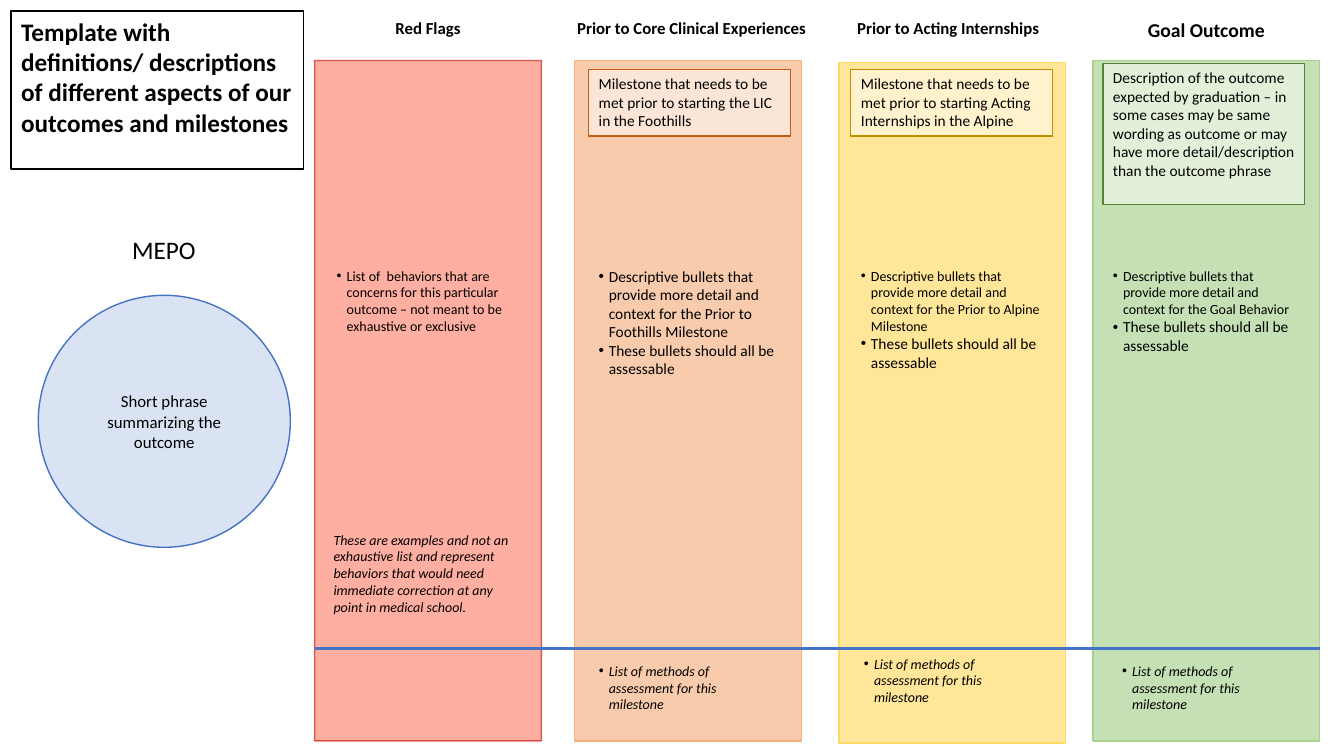
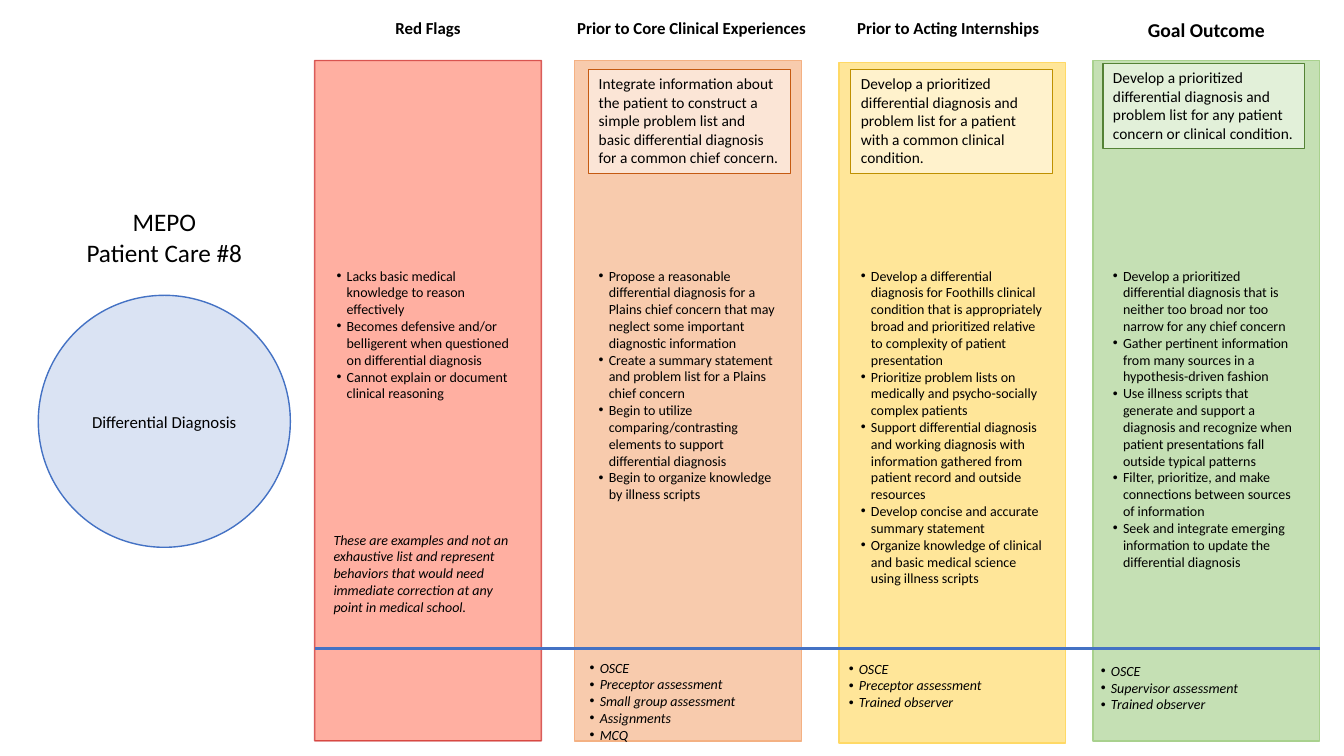
from lxml import etree
from pptx import Presentation
from pptx.dml.color import RGBColor
from pptx.enum.shapes import MSO_CONNECTOR, MSO_SHAPE
from pptx.enum.text import MSO_ANCHOR, MSO_AUTO_SIZE, PP_ALIGN
from pptx.oxml.ns import qn
from pptx.util import Pt

PX = 9144  # 100 px to the inch
LEFT, CENTER = PP_ALIGN.LEFT, PP_ALIGN.CENTER
TOP, MIDDLE = MSO_ANCHOR.TOP, MSO_ANCHOR.MIDDLE
RECTANGLE, OVAL = MSO_SHAPE.RECTANGLE, MSO_SHAPE.OVAL
GROW = MSO_AUTO_SIZE.SHAPE_TO_FIT_TEXT
STRAIGHT = MSO_CONNECTOR.STRAIGHT

FONT = "Calibri"
BLACK = RGBColor(0x00, 0x00, 0x00)
WHITE = RGBColor(0xFF, 0xFF, 0xFF)
BLUE = RGBColor(0x44, 0x72, 0xC4)
PALE_BLUE = RGBColor(0xDA, 0xE3, 0xF3)
RED = RGBColor(0xFF, 0x26, 0x00)
DARK_RED = RGBColor(0xC0, 0x00, 0x00)
ORANGE = RGBColor(0xF8, 0xCB, 0xAD)
ORANGE_EDGE = RGBColor(0xF4, 0xB1, 0x83)
PALE_ORANGE = RGBColor(0xFB, 0xE5, 0xD6)
DARK_ORANGE = RGBColor(0xC5, 0x5A, 0x11)
YELLOW = RGBColor(0xFF, 0xE6, 0x99)
YELLOW_EDGE = RGBColor(0xFF, 0xD9, 0x66)
PALE_YELLOW = RGBColor(0xFF, 0xF2, 0xCC)
DARK_YELLOW = RGBColor(0xBF, 0x90, 0x00)
GREEN = RGBColor(0xC5, 0xE0, 0xB4)
GREEN_EDGE = RGBColor(0xA9, 0xD1, 0x8E)
PALE_GREEN = RGBColor(0xE2, 0xF0, 0xD9)
DARK_GREEN = RGBColor(0x54, 0x82, 0x35)

COLUMN_WIDTH, COLUMN_HEIGHT = 225, 675
TEXT_WIDTH, DETAIL_TOP = 200, 260
DIVIDER_Y = 643
FLAG_ALPHAS = (37000, 59000)  # fill, then line

# left, top, fill, edge, text left
COLUMNS = [
    (312, 60, RED, DARK_RED, 324),
    (570, 60, ORANGE, ORANGE_EDGE, 584),
    (832, 62, YELLOW, YELLOW_EDGE, 844),
    (1084, 60, GREEN, GREEN_EDGE, 1094),
]
# text, left, width, height, size
HEADINGS = [
    ("Red Flags", 312, 225, 30, 12),
    ("Prior to Core Clinical Experiences", 560, 252, 30, 12),
    ("Prior to Acting Internships", 828, 225, 30, 12),
    ("Goal Outcome", 1084, 225, 34, 14),
]
# left, top, fill, edge
MILESTONES = [
    (584, 69, PALE_ORANGE, DARK_ORANGE),
    (844, 69, PALE_YELLOW, DARK_YELLOW),
    (1094, 63, PALE_GREEN, DARK_GREEN),
]
DISCLAIMER = (
    "These are examples and not an exhaustive list and represent behaviors that "
    "would need immediate correction at any point in medical school."
)
ASSESSABLE = "These bullets should all be assessable"
METHODS = ["List of methods of assessment for this milestone"]

PAGES = [
    {
        "banner": "Template with definitions/ descriptions of different aspects "
                  "of our outcomes and milestones",
        "label": (["MEPO"], (50, 228, 225, 40)),
        "outcome": "Short phrase summarizing the outcome",
        # height, sizes, bullets
        "details": [
            (77, [10], [
                "List of  behaviors that are concerns for this particular outcome "
                "– not meant to be exhaustive or exclusive"]),
            (121, [11, 11], [
                "Descriptive bullets that provide more detail and context for the "
                "Prior to Foothills Milestone", ASSESSABLE]),
            (133, [10, 11], [
                "Descriptive bullets that provide more detail and context for the "
                "Prior to Alpine Milestone", ASSESSABLE]),
            (98, [10, 11], [
                "Descriptive bullets that provide more detail and context for the "
                "Goal Behavior", ASSESSABLE]),
        ],
        # height, text
        "milestones": [
            (66, "Milestone that needs to be met prior to starting the LIC in the "
                 "Foothills"),
            (66, "Milestone that needs to be met prior to starting Acting "
                 "Internships in the Alpine"),
            (140, "Description of the outcome expected by graduation – in some "
                  "cases may be same wording as outcome or may have more "
                  "detail/description than the outcome phrase"),
        ],
        # place, bullets
        "methods": [
            ((584, 652, 192, 61), METHODS),
            ((847, 645, 161, 61), METHODS),
            ((1103, 652, 161, 61), METHODS),
        ],
    },
    {
        "banner": None,
        "label": (["MEPO", "Patient Care #8"], (75, 200, 176, 71)),
        "outcome": "Differential Diagnosis",
        "details": [
            (145, [10] * 3, [
                "Lacks basic medical knowledge to reason effectively",
                "Becomes defensive and/or belligerent when questioned on "
                "differential diagnosis",
                "Cannot explain or document clinical reasoning"]),
            (246, [10] * 4, [
                "Propose a reasonable differential diagnosis for a Plains chief "
                "concern that may neglect some important diagnostic information",
                "Create a summary statement and problem list for a Plains chief "
                "concern",
                "Begin to utilize comparing/contrasting elements to support "
                "differential diagnosis",
                "Begin to organize knowledge by illness scripts"]),
            (365, [10] * 5, [
                "Develop a differential diagnosis for Foothills clinical condition "
                "that is appropriately broad and prioritized relative to "
                "complexity of patient presentation",
                "Prioritize problem lists on medically and psycho-socially complex "
                "patients",
                "Support differential diagnosis and working diagnosis with "
                "information gathered from patient record and outside resources",
                "Develop concise and accurate summary statement",
                "Organize knowledge of clinical and basic medical science using "
                "illness scripts"]),
            (313, [10] * 5, [
                "Develop a prioritized differential diagnosis that is neither too "
                "broad nor too narrow for any chief concern",
                "Gather pertinent information from many sources in a "
                "hypothesis-driven fashion",
                "Use illness scripts that generate and support a diagnosis and "
                "recognize when patient presentations fall outside typical patterns",
                "Filter, prioritize, and make connections between sources of "
                "information",
                "Seek and integrate emerging information to update the "
                "differential diagnosis"]),
        ],
        "milestones": [
            (103, "Integrate information about the patient to construct a simple "
                  "problem list and basic differential diagnosis for a common "
                  "chief concern."),
            (103, "Develop a prioritized differential diagnosis and problem list "
                  "for a patient with a common clinical condition."),
            (84, "Develop a prioritized differential diagnosis and problem list "
                 "for any patient concern or clinical condition."),
        ],
        "methods": [
            ((575, 649, 209, 94), ["OSCE", "Preceptor assessment",
                                   "Small group assessment", "Assignments", "MCQ"]),
            ((832, 650, 161, 61), ["OSCE", "Preceptor assessment",
                                   "Trained observer"]),
            ((1082, 652, 161, 61), ["OSCE", "Supervisor assessment",
                                    "Trained observer"]),
        ],
    },
]


def add_box(page, place, fill=None, edge=None, width=1, kind=RECTANGLE, box=None):
    """Place a filled shape, a plain text box (no fill) or the given placeholder."""
    left, top, wide, high = [length * PX for length in place]
    if box is not None:
        box.left, box.top, box.width, box.height = left, top, wide, high
    elif fill is None:
        box = page.shapes.add_textbox(left, top, wide, high)
    else:
        box = page.shapes.add_shape(kind, left, top, wide, high)
        box.shadow.inherit = False
    if fill is not None:
        box.fill.solid()
        box.fill.fore_color.rgb = fill
        box.line.color.rgb = edge
        box.line.width = Pt(width)
    return box


def write(box, texts, sizes, align=LEFT, bold=False, italic=False, bullets=False,
          anchor=TOP, auto_size=GROW):
    frame = box.text_frame
    frame.word_wrap = True
    frame.auto_size = auto_size
    frame.vertical_anchor = anchor
    for index, (text, size) in enumerate(zip(texts, sizes)):
        para = frame.add_paragraph() if index else frame.paragraphs[0]
        para.text = text
        para.alignment = align
        if bullets:
            properties = para._p.get_or_add_pPr()
            properties.set("marL", str(10 * PX))
            properties.set("indent", str(-10 * PX))
            etree.SubElement(properties, qn("a:buFont"), typeface="Arial")
            etree.SubElement(properties, qn("a:buChar"), char="•")
        font = para.font
        font.name, font.size = FONT, Pt(size)
        font.bold, font.italic = bold, italic
        font.color.rgb = BLACK


deck = Presentation()
deck.slide_width, deck.slide_height = 1333 * PX, 750 * PX
title_only = deck.slide_layouts[5]

for content in PAGES:
    page = deck.slides.add_slide(title_only)
    title = page.shapes.title

    circle = add_box(page, (38, 293, 250, 250), PALE_BLUE, BLUE, kind=OVAL)
    write(circle, [content["outcome"]], [12], CENTER, anchor=MIDDLE,
          auto_size=MSO_AUTO_SIZE.NONE)

    label_texts, label_place = content["label"]
    if content["banner"]:
        banner = add_box(page, (11, 11, 290, 131), WHITE, BLACK, box=title)
        write(banner, [content["banner"]], [18], bold=True)
        label = add_box(page, label_place)
    else:
        label = add_box(page, label_place, box=title)
    write(label, label_texts, [18] * len(label_texts), CENTER)

    for left, top, fill, edge, _ in COLUMNS:
        column = add_box(page, (left, top, COLUMN_WIDTH, COLUMN_HEIGHT), fill, edge)
        if fill == RED:
            colors = column._element.spPr.iter(qn("a:srgbClr"))
            for color, alpha in zip(list(colors), FLAG_ALPHAS):
                etree.SubElement(color, qn("a:alpha"), val=str(alpha))

    for text, left, width, height, size in HEADINGS:
        heading = add_box(page, (left, 13, width, height))
        write(heading, [text], [size], CENTER, bold=True)

    for (*_, left), (height, sizes, texts) in zip(COLUMNS, content["details"]):
        detail = add_box(page, (left, DETAIL_TOP, TEXT_WIDTH, height))
        write(detail, texts, sizes, bullets=True)

    divider = page.shapes.add_connector(
        STRAIGHT, 312 * PX, DIVIDER_Y * PX, 1309 * PX, DIVIDER_Y * PX)
    divider.line.color.rgb = BLUE
    divider.line.width = Pt(2.25)
    etree.SubElement(divider._element.spPr, qn("a:effectLst"))

    for place, texts in content["methods"]:
        methods = add_box(page, place)
        write(methods, texts, [10] * len(texts), italic=True, bullets=True)

    for (left, top, fill, edge), (height, text) in zip(
            MILESTONES, content["milestones"]):
        milestone = add_box(page, (left, top, TEXT_WIDTH, height), fill, edge, 0.75)
        write(milestone, [text], [11])

    disclaimer = add_box(page, (321, 522, TEXT_WIDTH, 111))
    write(disclaimer, [DISCLAIMER], [10], italic=True)

deck.save("out.pptx")
